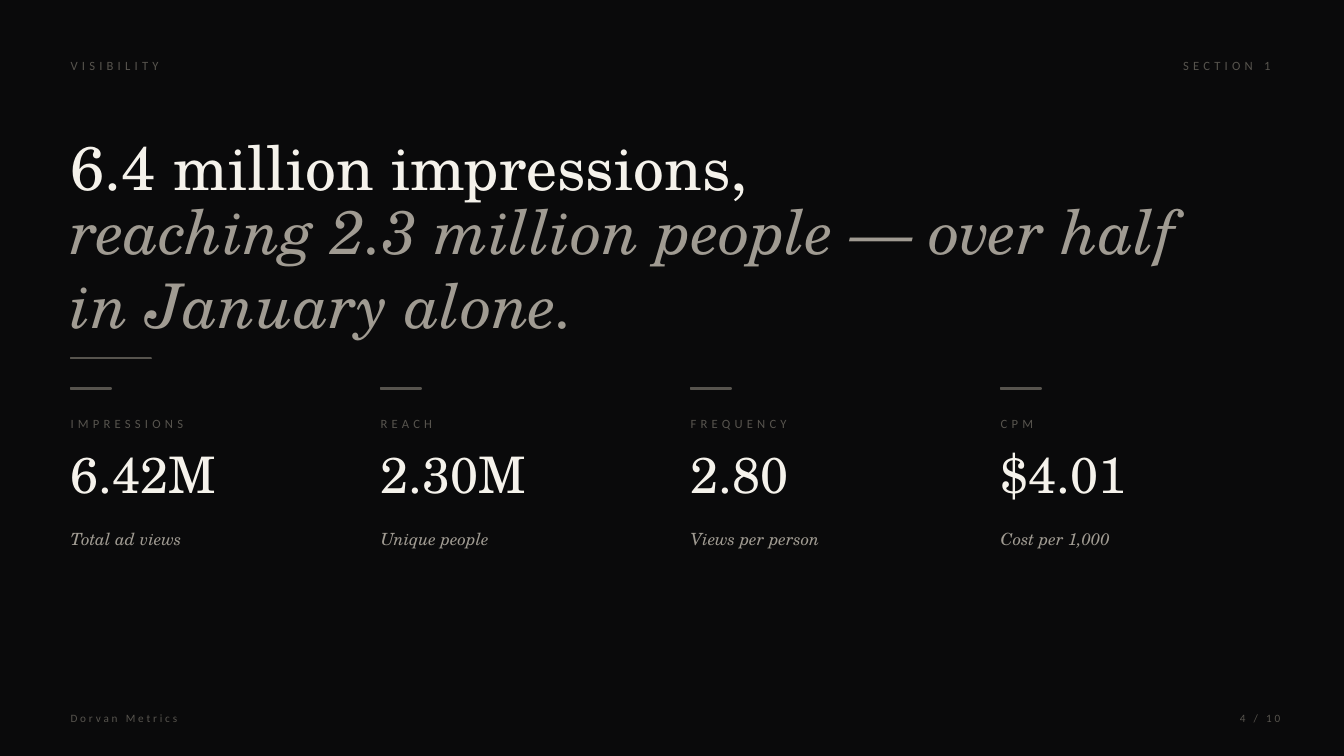
import dataclasses

import pptx
import pptx.dml.color
import pptx.enum.shapes
import pptx.enum.text
import pptx.util

ALIGN = pptx.enum.text.PP_ALIGN
ANCHOR = pptx.enum.text.MSO_ANCHOR


@dataclasses.dataclass(frozen=True)
class Style:
    font: str
    size: int
    color: str
    italic: bool = False
    track: int = 0


class Theme:
    back = "0A0A0B"
    dim = "57544E"
    soft = "A09B92"
    light = "F5F2EB"
    sans = "Calibri"
    serif = "TeX Gyre Schola"
    label = Style(sans, 9, dim, track=300)
    foot = Style(sans, 8, dim, track=200)
    title = Style(serif, 44, light)
    accent = Style(serif, 44, soft, italic=True)
    value = Style(serif, 36, light)
    note = Style(serif, 12, soft, italic=True)


def tint(code):
    return pptx.dml.color.RGBColor.from_string(code)


class Page:
    cell = 0.1

    def __init__(self, deck, theme):
        self.theme = theme
        self.slide = deck.slides.add_slide(deck.slide_layouts[6])
        fill = self.slide.background.fill
        fill.solid()
        fill.fore_color.rgb = tint(theme.back)

    def grid(self, *cells):
        return [pptx.util.Inches(n * self.cell) for n in cells]

    def text(self, words, style, col, row, cols, rows,
             align=ALIGN.LEFT, anchor=ANCHOR.MIDDLE):
        box = self.slide.shapes.add_textbox(*self.grid(col, row, cols, rows))
        frame = box.text_frame
        frame.word_wrap = True
        frame.vertical_anchor = anchor
        frame.margin_left = frame.margin_right = 0
        frame.margin_top = frame.margin_bottom = 0
        para = frame.paragraphs[0]
        para.alignment = align
        run = para.add_run()
        run.text = words
        font = run.font
        font.name = style.font
        font.size = pptx.util.Pt(style.size)
        font.italic = style.italic
        font.color.rgb = tint(style.color)
        if style.track:
            run._r.get_or_add_rPr().set("spc", str(style.track))

    def rule(self, col, row, cols):
        bar = self.slide.shapes.add_shape(
            pptx.enum.shapes.MSO_SHAPE.RECTANGLE,
            *self.grid(col, row, cols, 0.1))
        bar.shadow.inherit = False
        bar.fill.solid()
        bar.fill.fore_color.rgb = tint(self.theme.dim)
        bar.line.color.rgb = tint(self.theme.dim)
        bar.line.width = pptx.util.Pt(1)

    def metric(self, col, cols, name, value, note):
        self.rule(col, 38.5, 4)
        self.text(name, self.theme.label, col, 40.5, cols, 3)
        self.text(value, self.theme.value, col, 44, cols, 11,
                  anchor=ANCHOR.TOP)
        self.text(note, self.theme.note, col, 51.5, cols, 4)


def main():
    deck = pptx.Presentation()
    deck.slide_width = pptx.util.Inches(13.33)
    deck.slide_height = pptx.util.Inches(7.5)
    theme = Theme()
    page = Page(deck, theme)

    left, span, gap = 7, 119, 4
    page.text("VISIBILITY", theme.label, left, 5, 80, 3)
    page.text("SECTION 1", theme.label, 96, 5, 30, 3, ALIGN.RIGHT)
    page.text("6.4 million impressions,", theme.title, left, 12, 115, 9)
    page.text("reaching 2.3 million people — over half in January alone.",
              theme.accent, left, 22, 115, 9)
    page.rule(left, 35.5, 8)

    metrics = [
        ("IMPRESSIONS", "6.42M", "Total ad views"),
        ("REACH", "2.30M", "Unique people"),
        ("FREQUENCY", "2.80", "Views per person"),
        ("CPM", "$4.01", "Cost per 1,000"),
    ]
    wide = (span + gap) / len(metrics) - gap
    for slot, facts in enumerate(metrics):
        page.metric(left + slot * (wide + gap), wide, *facts)

    page.text("4 / 10", theme.foot, 121, 70, 6, 2.5, ALIGN.RIGHT)
    page.text("Dorvan Metrics", theme.foot, left, 70, 30, 2.5)
    deck.save("out.pptx")


if __name__ == "__main__":
    main()
